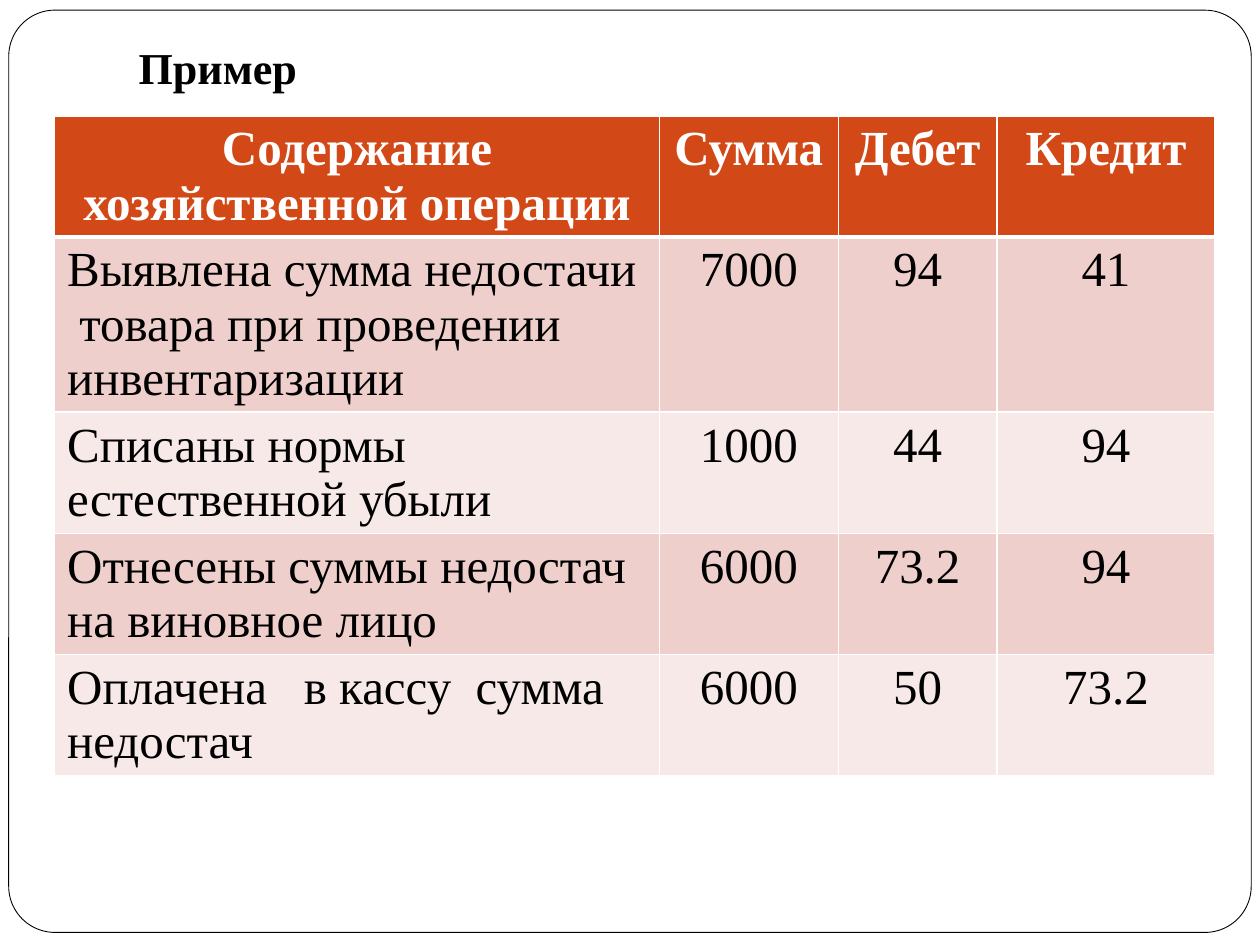
import pptx
import pptx.dml.color
import pptx.enum.shapes
import pptx.enum.text
import pptx.oxml
import pptx.oxml.ns
import pptx.util

Pt = pptx.util.Pt
ALIGN = pptx.enum.text.PP_ALIGN
ANCHOR = pptx.enum.text.MSO_ANCHOR

TITLE = "Пример"
ROWS = [
    ("Содержание хозяйственной операции", "Сумма", "Дебет", "Кредит"),
    ("Выявлена сумма недостачи  товара при проведении инвентаризации",
     "7000", "94", "41"),
    ("Списаны нормы естественной убыли", "1000", "44", "94"),
    ("Отнесены суммы недостач на виновное лицо", "6000", "73.2", "94"),
    ("Оплачена   в кассу  сумма недостач", "6000", "50", "73.2"),
]
WIDTHS = [345.6, 102.2, 90.7, 124.6]
HEIGHTS = [69, 100, 69, 69, 69]
HEAD = "D34817"
BANDS = ["F7E9E8", "EFCFCC"]


def color(code):
    return pptx.dml.color.RGBColor.from_string(code)


def paint(fill, code):
    fill.solid()
    fill.fore_color.rgb = color(code)


def write(frame, text, size=28, ink="000000", bold=False, align=ALIGN.LEFT):
    par = frame.paragraphs[0]
    par.alignment = align
    run = par.add_run()
    run.text = text
    font = run.font
    font.name = "Times New Roman"
    font.size = Pt(size)
    font.bold = bold
    font.color.rgb = color(ink)


def edge(cell, widths):
    """Give a cell white borders; widths are in points, by side."""
    props = cell._tc.get_or_add_tcPr()
    for i, side in enumerate("LRTB"):
        props.insert(i, pptx.oxml.parse_xml(
            f'<a:ln{side} {pptx.oxml.ns.nsdecls("a")} w="{Pt(widths[side])}">'
            f'<a:solidFill><a:srgbClr val="FFFFFF"/></a:solidFill></a:ln{side}>'))


def add_frame(slide):
    box = slide.shapes.add_shape(
        pptx.enum.shapes.MSO_SHAPE.ROUNDED_RECTANGLE,
        Pt(5), Pt(5.8), Pt(710), Pt(527))
    box.adjustments[0] = 0.05
    box.shadow.inherit = False
    paint(box.fill, "FFFFFF")
    box.line.color.rgb = color("000000")
    box.line.width = Pt(0.5)
    slide.shapes._spTree.insert(2, box._element)  # behind the title


def add_title(slide):
    title = slide.shapes.title
    title.left, title.top = Pt(72), Pt(21.6)
    title.width, title.height = Pt(612), Pt(38.9)
    frame = title.text_frame
    frame.auto_size = pptx.enum.text.MSO_AUTO_SIZE.NONE
    frame.vertical_anchor = ANCHOR.BOTTOM
    frame.margin_left = frame.margin_right = frame.margin_bottom = Pt(7.2)
    frame.margin_top = Pt(3.6)
    write(frame, TITLE, size=25.2, bold=True)


def add_grid(slide):
    grid = slide.shapes.add_table(
        len(ROWS), len(WIDTHS), Pt(31.2), Pt(66.2),
        Pt(sum(WIDTHS)), Pt(sum(HEIGHTS))).table
    for col, width in zip(grid.columns, WIDTHS):
        col.width = Pt(width)
    for r, row in enumerate(ROWS):
        grid.rows[r].height = Pt(HEIGHTS[r])
        head = r == 0
        for c, text in enumerate(row):
            cell = grid.cell(r, c)
            paint(cell.fill, HEAD if head else BANDS[r % 2])
            edge(cell, {"L": 1, "R": 1, "T": 3 if r == 1 else 1,
                        "B": 3 if head else 1})
            write(cell.text_frame, text, bold=head,
                  ink="FFFFFF" if head else "000000",
                  align=ALIGN.CENTER if head or c else ALIGN.LEFT)


def main():
    deck = pptx.Presentation()
    deck.slide_width, deck.slide_height = Pt(720), Pt(540)
    slide = deck.slides.add_slide(deck.slide_layouts[5])
    add_frame(slide)
    add_title(slide)
    add_grid(slide)
    deck.save("out.pptx")


if __name__ == "__main__":
    main()
